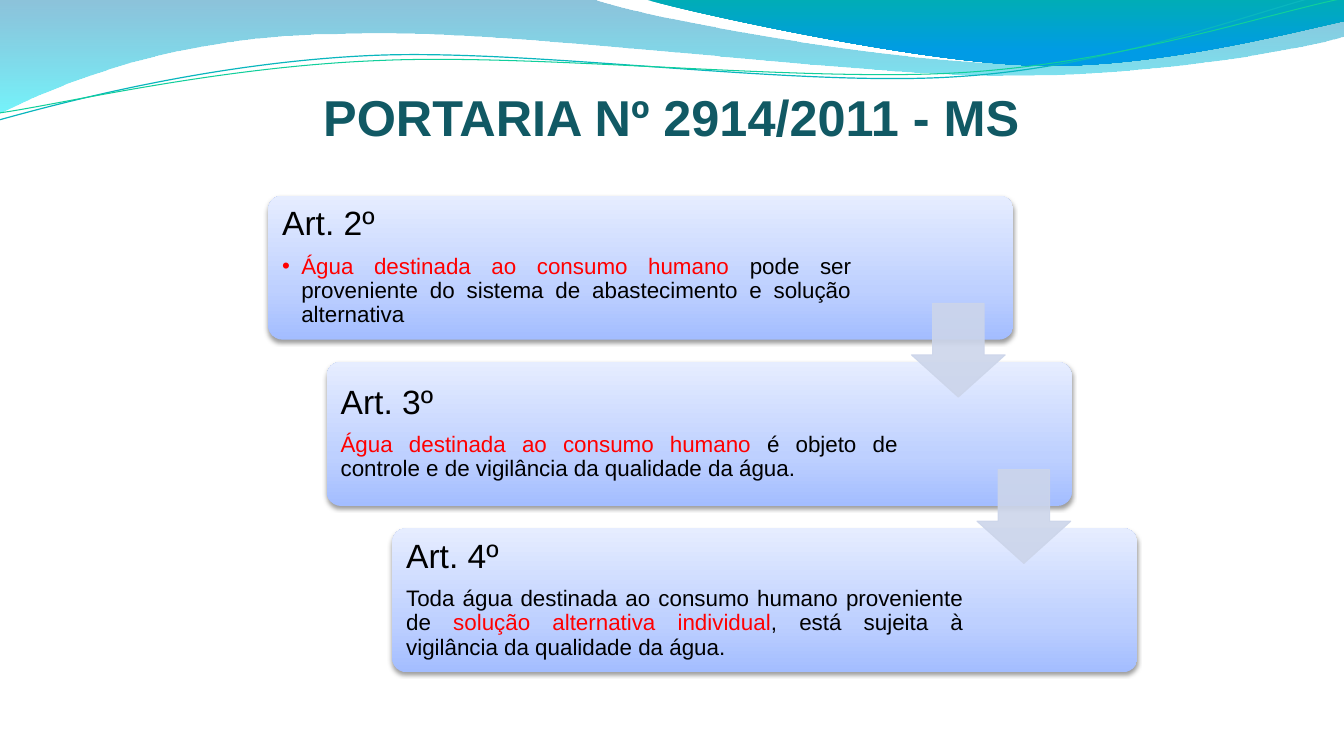
from lxml.etree import SubElement
from pptx import Presentation
from pptx.dml.color import RGBColor
from pptx.enum.shapes import MSO_SHAPE
from pptx.enum.text import MSO_ANCHOR, PP_ALIGN
from pptx.oxml.ns import qn
from pptx.util import Inches, Pt

COLORS = {
    "title": "115964", "text": "000000", "highlight": "FF0000",
    "arrow": "CCD5EA", "teal_line": "09B6BE", "green_line": "10CF9B",
}
CARD_GRADIENT = [(0, "A3BDFF", 100), (35, "BED0FF", 100), (100, "E6EDFF", 100)]
PALE_GRADIENT = [(0, "0079AF", 45), (100, "00EBF8", 55)]
DEEP_GRADIENT = [(0, "00ADB6", 100), (80, "009BE5", 100), (100, "009BE5", 100)]

PALE_WAVE = [
    (0, -0.01), (5.87, -0.01),
    (6.34, 0.17, 8.85, 0.63, 10.11, 0.63),
    (11.38, 0.63, 12.78, 0.26, 13.33, 0.09),
    (13.35, 0.36),
    (13.11, 0.44, 11.6, 0.76, 9.94, 0.75),
    (8.29, 0.75, 5.09, 0.28, 3.43, 0.34),
    (1.72, 0.35, 0.61, 0.83, -0.01, 1.13),
    (0, -0.01),
]
DEEP_WAVE = [
    (6.39, -0.01),
    (6.79, 0.11, 9.09, 0.62, 10.25, 0.65),
    (11.41, 0.69, 12.82, 0.32, 13.33, 0.21),
    (13.33, 0), (6.39, -0.01),
]
TEAL_CURVE = [
    (-0.01, 1.19),
    (0.64, 1.01, 2.11, 0.62, 3.69, 0.55),
    (5.27, 0.48, 7.9, 0.87, 9.5, 0.76),
    (11.1, 0.66, 12.52, 0.08, 13.31, -0.1),
]
GREEN_CURVE = [
    (0, 1.12),
    (0.63, 1.03, 2.18, 0.66, 3.78, 0.6),
    (5.37, 0.53, 7.96, 0.82, 9.55, 0.72),
    (11.15, 0.62, 12.55, 0.14, 13.34, -0.02),
]
ARTICLES = [
    (2.66, 5.84, "Art. 2º", True, [
        ("Água destinada ao consumo humano ", "highlight"),
        ("pode ser proveniente do sistema de abastecimento e solução alternativa", "text")]),
    (3.24, 5.72, "Art. 3º", False, [
        ("Água destinada ao consumo humano ", "highlight"),
        ("é objeto de controle e de vigilância da qualidade da água.", "text")]),
    (3.89, 5.72, "Art. 4º", False, [
        ("Toda água destinada ao consumo humano proveniente de ", "text"),
        ("solução alternativa individual", "highlight"),
        (", está sujeita à vigilância da qualidade da água.", "text")]),
]
CARD_TOP, ARROW_TOP, ROW_STEP = 1.94, 3.01, 1.65
ARROW_LEFTS = [9.04, 9.69]
ARROW_SIZE = 0.93


def rgb(name):
    return RGBColor.from_string(COLORS[name])


def add_color(parent, hex_color, opacity):
    color = SubElement(parent, qn("a:srgbClr"), val=hex_color)
    if opacity < 100:
        SubElement(color, qn("a:alpha"), val=str(opacity * 1000))


def set_gradient(shape, stops, angle):
    shape.fill.gradient()
    gradient = shape.element.spPr.find(qn("a:gradFill"))
    for child in list(gradient):
        gradient.remove(child)
    stop_list = SubElement(gradient, qn("a:gsLst"))
    for position, hex_color, opacity in stops:
        stop = SubElement(stop_list, qn("a:gs"), pos=str(position * 1000))
        add_color(stop, hex_color, opacity)
    SubElement(gradient, qn("a:lin"), ang=str(angle * 60000), scaled="0")


def set_shadow(shape):
    effects = shape.element.spPr.find(qn("a:effectLst"))
    shadow = SubElement(effects, qn("a:outerShdw"), blurRad=str(Pt(3.1)),
                        dist=str(Pt(1.6)), dir="5400000", rotWithShape="0")
    add_color(shadow, "000000", 38)


def add_outline(slide, segments, closed):
    ends = [(Inches(segment[-2]), Inches(segment[-1])) for segment in segments]
    builder = slide.shapes.build_freeform(*ends[0])
    builder.add_line_segments(ends[1:], close=closed)
    outline = builder.convert_to_shape()
    outline.shadow.inherit = False
    steps = list(outline.element.spPr.iter(qn("a:lnTo")))
    for step, segment in zip(steps, segments[1:]):
        if len(segment) == 6:
            bend(step, segment, outline.left, outline.top)
    return outline


def bend(step, segment, left, top):
    step.tag = qn("a:cubicBezTo")
    for child in list(step):
        step.remove(child)
    for x, y in zip(segment[::2], segment[1::2]):
        SubElement(step, qn("a:pt"), x=str(Inches(x) - left), y=str(Inches(y) - top))


def add_wave(slide, segments, stops):
    wave = add_outline(slide, segments, True)
    set_gradient(wave, stops, 90)
    wave.line.fill.background()


def add_curve(slide, segments, color, width):
    curve = add_outline(slide, segments, False)
    curve.fill.background()
    curve.line.color.rgb = rgb(color)
    curve.line.width = Pt(width)


def add_text(slide, paragraphs, left, top, width, height, *, anchor, insets):
    box = slide.shapes.add_textbox(Inches(left), Inches(top), Inches(width), Inches(height))
    frame = box.text_frame
    frame.word_wrap = True
    frame.vertical_anchor = anchor
    (frame.margin_left, frame.margin_top,
     frame.margin_right, frame.margin_bottom) = map(Inches, insets)
    for index, content in enumerate(paragraphs):
        paragraph = frame.paragraphs[0] if index == 0 else frame.add_paragraph()
        write_paragraph(paragraph, **content)


def write_paragraph(paragraph, runs, size, align=PP_ALIGN.JUSTIFY, bold=False,
                    bullet=False, spacing=0.9, after=0):
    if bullet:
        properties = paragraph._p.get_or_add_pPr()
        properties.set("marL", str(Inches(0.19)))
        properties.set("indent", str(Inches(-0.19)))
        SubElement(properties, qn("a:buFont"), typeface="Arial")
        SubElement(properties, qn("a:buChar"), char="•")
    paragraph.alignment = align
    paragraph.line_spacing = spacing
    paragraph.space_after = Pt(after)
    for words, color in runs:
        run = paragraph.add_run()
        run.text = words
        run.font.name = "Arial"
        run.font.size = Pt(size)
        run.font.bold = bold
        run.font.color.rgb = rgb(color)


def add_card(slide, left, top, text_width, heading, bullet, body):
    card = slide.shapes.add_shape(MSO_SHAPE.ROUNDED_RECTANGLE, Inches(left), Inches(top),
                                  Inches(7.39), Inches(1.43))
    card.adjustments[0] = 0.1
    set_gradient(card, CARD_GRADIENT, 270)
    card.line.fill.background()
    card.shadow.inherit = False
    set_shadow(card)
    add_text(slide, [
        {"runs": [(heading, "text")], "size": 24, "after": 8.4},
        {"runs": body, "size": 16, "bullet": bullet, "after": 2.4},
    ], left + 0.04, top + 0.04, text_width, 1.34,
        anchor=MSO_ANCHOR.MIDDLE, insets=(0.1, 0.1, 0.1, 0.1))


def add_arrow(slide, left, top):
    arrow = slide.shapes.add_shape(MSO_SHAPE.DOWN_ARROW, Inches(left), Inches(top),
                                   Inches(ARROW_SIZE), Inches(ARROW_SIZE))
    arrow.adjustments[0] = 0.55
    arrow.adjustments[1] = 0.45
    arrow.shadow.inherit = False
    arrow.line.width = Pt(0.75)
    for paint in (arrow.fill, arrow.line.fill):
        paint.solid()
        paint.fore_color.rgb = rgb("arrow")
    for color in arrow.element.spPr.iter(qn("a:srgbClr")):
        SubElement(color, qn("a:alpha"), val="90000")


def main():
    deck = Presentation()
    deck.slide_width, deck.slide_height = Inches(13.33), Inches(7.5)
    slide = deck.slides.add_slide(deck.slide_layouts[6])
    add_wave(slide, PALE_WAVE, PALE_GRADIENT)
    add_wave(slide, DEEP_WAVE, DEEP_GRADIENT)
    add_curve(slide, TEAL_CURVE, "teal_line", 0.85)
    add_curve(slide, GREEN_CURVE, "green_line", 0.75)
    add_text(slide, [{"runs": [("PORTARIA Nº 2914/2011 - MS", "title")], "size": 36,
                      "align": PP_ALIGN.CENTER, "bold": True, "spacing": 1.0}],
             2.16, 0.2, 9, 1.25, anchor=MSO_ANCHOR.BOTTOM, insets=(0, 0.05, 0, 0))
    for row, (left, text_width, heading, bullet, body) in enumerate(ARTICLES):
        add_card(slide, left, CARD_TOP + row * ROW_STEP, text_width, heading, bullet, body)
    for row, left in enumerate(ARROW_LEFTS):
        add_arrow(slide, left, ARROW_TOP + row * ROW_STEP)
    deck.save("out.pptx")


if __name__ == "__main__":
    main()
